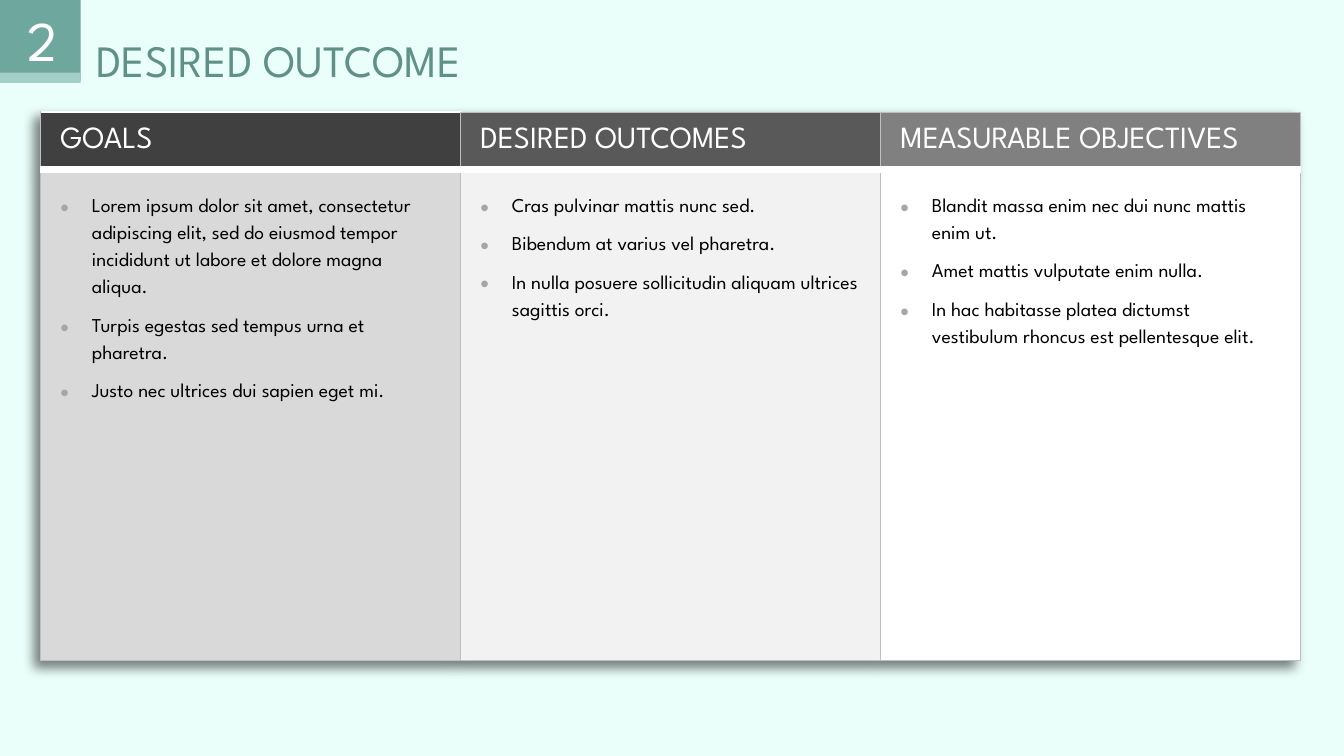
from lxml import etree
from pptx import Presentation
from pptx.dml.color import RGBColor
from pptx.enum.shapes import MSO_SHAPE
from pptx.enum.text import MSO_ANCHOR, PP_ALIGN
from pptx.oxml.ns import qn
from pptx.util import Pt

RECTANGLE, OVAL = MSO_SHAPE.RECTANGLE, MSO_SHAPE.OVAL
TOP, MIDDLE = MSO_ANCHOR.TOP, MSO_ANCHOR.MIDDLE
LEFT, CENTER = PP_ALIGN.LEFT, PP_ALIGN.CENTER
TITLE_ONLY = 5
FONT = "League Spartan"
COLORS = {
    "background": "EAFEFA", "title": "609188", "badge": "6EA79D", "badge_edge": "A4CFC8",
    "white": "FFFFFF", "black": "000000", "border": "BFBFBF", "bullet": "A6A6A6",
    "goals_head": "404040", "outcomes_head": "595959", "objectives_head": "808080",
    "goals_body": "D9D9D9", "outcomes_body": "F2F2F2", "objectives_body": "FFFFFF",
}
COLUMNS = [
    ("goals", "GOALS", [
        "Lorem ipsum dolor sit amet, consectetur adipiscing elit, sed do eiusmod tempor "
        "incididunt ut labore et dolore magna aliqua.",
        "Turpis egestas sed tempus urna et pharetra.",
        "Justo nec ultrices dui sapien eget mi."]),
    ("outcomes", "DESIRED OUTCOMES", [
        "Cras pulvinar mattis nunc sed.",
        "Bibendum at varius vel pharetra.",
        "In nulla posuere sollicitudin aliquam ultrices sagittis orci."]),
    ("objectives", "MEASURABLE OBJECTIVES", [
        "Blandit massa enim nec dui nunc mattis enim ut.",
        "Amet mattis vulputate enim nulla.",
        "In hac habitasse platea dictumst vestibulum rhoncus est pellentesque elit."]),
]


def add_node(parent, tag, **attributes):
    """Append a DrawingML element with the given attributes."""
    node = etree.SubElement(parent, qn(f"a:{tag}"))
    for name, value in attributes.items():
        node.set(name, str(value))
    return node


def add_bullet(para, indent=22.5):
    """Give a paragraph a hanging grey bullet."""
    props = para._p.get_or_add_pPr()
    props.set("marL", str(Pt(indent)))
    props.set("indent", str(-Pt(indent)))
    add_node(add_node(props, "buClr"), "srgbClr", val=COLORS["bullet"])
    add_node(props, "buSzPct", val=125000)
    add_node(props, "buFont", typeface="Arial")
    add_node(props, "buChar", char="•")


def add_table_shadow(table):
    """Cast a soft shadow down and to the left of a table."""
    props = table._tbl.tblPr
    effects = add_node(props, "effectLst")
    props.insert(0, effects)
    shadow = add_node(effects, "outerShdw", blurRad=Pt(8), dist=Pt(6),
                      dir=8100000, algn="tr", rotWithShape=0)
    add_node(add_node(shadow, "srgbClr", val=COLORS["black"]), "alpha", val=50000)


class SlideBuilder:
    """Hold the style and the current slide."""

    def __init__(self, page):
        """Take a slide and paint its background."""
        self.page = page
        self.paint(page.background.fill, "background")

    def paint(self, fill, color):
        """Make a fill solid in a named colour."""
        fill.solid()
        fill.fore_color.rgb = RGBColor.from_string(COLORS[color])

    def set_text(self, frame, lines, size, color, align=LEFT, spacing=1.0, after=0,
                 bullet=False):
        """Set one paragraph per line in the given format."""
        for index, line in enumerate(lines):
            para = frame.add_paragraph() if index else frame.paragraphs[0]
            para.alignment = align
            para.line_spacing = spacing
            para.space_before, para.space_after = Pt(0), Pt(after)
            if bullet:
                add_bullet(para)
            span = para.add_run()
            span.text = line
            span.font.name, span.font.size = FONT, Pt(size)
            span.font.color.rgb = RGBColor.from_string(COLORS[color])

    def title(self, text, left, top, width, height):
        """Move and format the title placeholder."""
        box = self.page.shapes.title
        box.left, box.top, box.width, box.height = map(Pt, (left, top, width, height))
        box.text_frame.word_wrap = False
        box.text_frame.vertical_anchor = TOP
        self.set_text(box.text_frame, [text], size=32, color="title")

    def shape(self, kind, left, top, width, height, fill=None):
        """Add a flat shape without an outline."""
        box = self.page.shapes.add_shape(kind, *map(Pt, (left, top, width, height)))
        box.shadow.inherit = False
        box.line.fill.background()
        if fill:
            self.paint(box.fill, fill)
        else:
            box.fill.background()
        return box

    def cell(self, cell, fill, margins, anchor, edges):
        """Set the margins, borders and fill of a table cell."""
        (cell.margin_left, cell.margin_top,
         cell.margin_right, cell.margin_bottom) = map(Pt, margins)
        cell.vertical_anchor = anchor
        props = cell._tc.get_or_add_tcPr()
        for side in "LRTB":
            if side in edges:
                color, width = edges[side]
                line = add_node(props, f"ln{side}", w=Pt(width))
                add_node(add_node(line, "solidFill"), "srgbClr", val=COLORS[color])
        self.paint(cell.fill, fill)

    def table(self, columns, left, top, column_width, row_heights):
        """Add a shadowed table with a heading and a bullet list per column."""
        frame = self.page.shapes.add_table(
            len(row_heights), len(columns), Pt(left), Pt(top),
            Pt(column_width * len(columns)), Pt(sum(row_heights)))
        table = frame.table
        table.first_row = table.horz_banding = False
        add_table_shadow(table)
        for row, height in zip(table.rows, row_heights):
            row.height = Pt(height)
        thin, thick = ("border", 0.5), ("white", 6)
        for index, (name, heading, items) in enumerate(columns):
            table.columns[index].width = Pt(column_width)
            head, body = table.cell(0, index), table.cell(1, index)
            edges = {"L": thin, "R": thin, "B": thick}
            if index:
                edges["T"] = thin
            self.cell(head, f"{name}_head", (14.4, 0.5, 1, 0), MIDDLE, edges)
            self.set_text(head.text_frame, [heading], size=22, color="white")
            self.cell(body, f"{name}_body", (14.4,) * 4, TOP,
                      {"L": thin, "R": thin, "T": thick, "B": thin})
            self.set_text(body.text_frame, items, size=14, color="black",
                          spacing=1.5, after=8, bullet=True)


def main():
    """Build the slide and save the deck."""
    deck = Presentation()
    deck.slide_width, deck.slide_height = Pt(960), Pt(540)
    page = deck.slides.add_slide(deck.slide_layouts[TITLE_ONLY])
    builder = SlideBuilder(page)
    builder.table(COLUMNS, left=28.8, top=80, column_width=300, row_heights=(41, 351))
    builder.title("DESIRED OUTCOME", 61.6, 19.5, 314, 46)
    builder.shape(RECTANGLE, 0, 0, 57.6, 57.6, fill="badge")
    builder.shape(RECTANGLE, 0, 52, 57.6, 7.2, fill="badge_edge")
    number = builder.shape(OVAL, 2, -0.7, 57.6, 57.6)
    number.text_frame.vertical_anchor = MIDDLE
    builder.set_text(number.text_frame, ["2"], size=40, color="white", align=CENTER)
    deck.save("out.pptx")


main()
